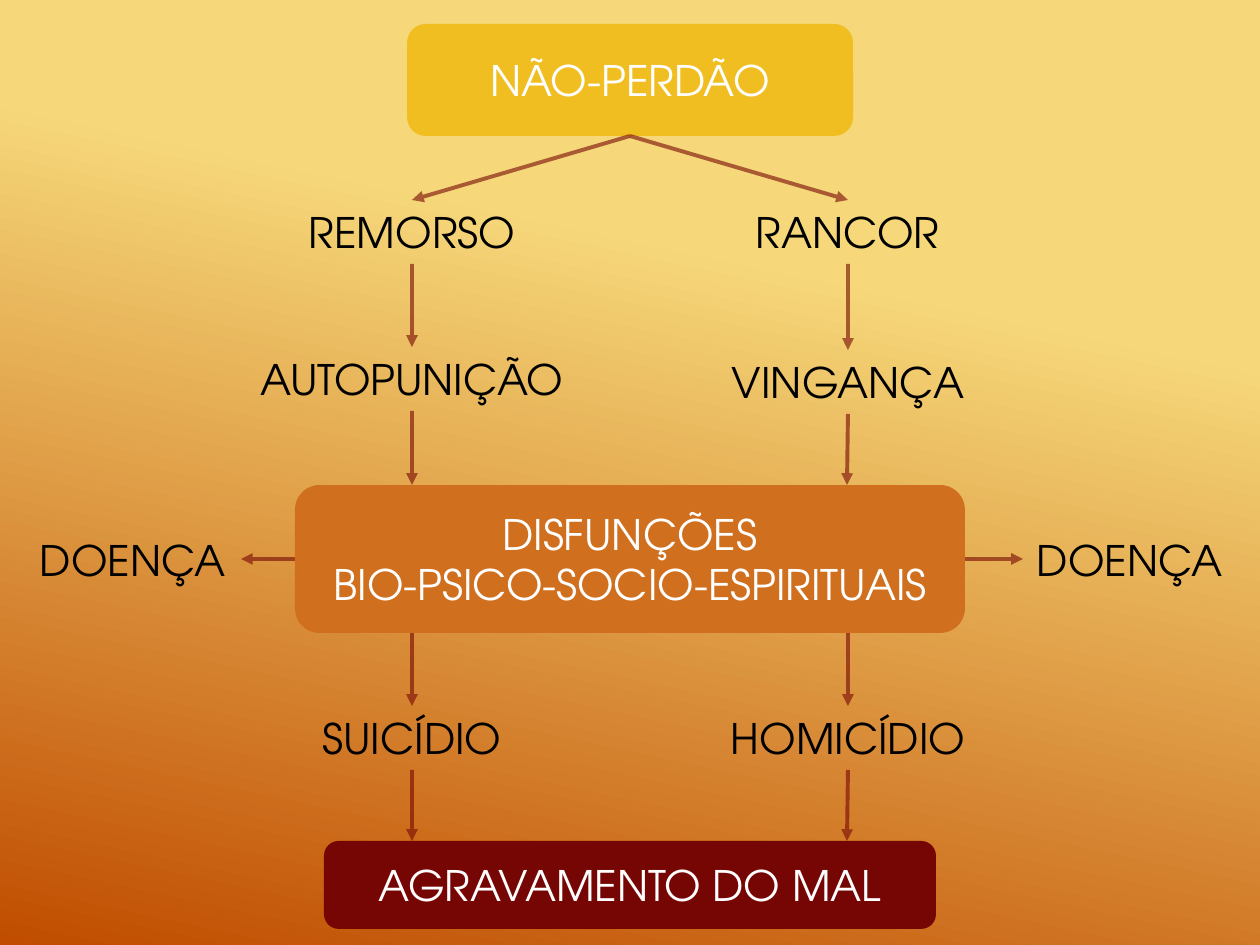
import lxml.etree
import pptx
import pptx.dml.color
import pptx.enum.shapes
import pptx.enum.text
import pptx.oxml.ns
import pptx.util

RGBColor = pptx.dml.color.RGBColor
PALE_YELLOW = RGBColor(0xF6, 0xD8, 0x7A)
BURNT_ORANGE = RGBColor(0xC0, 0x4D, 0x00)
GOLD = RGBColor(0xF0, 0xBE, 0x21)
ORANGE = RGBColor(0xD0, 0x6F, 0x1E)
MAROON = RGBColor(0x76, 0x06, 0x03)
WHITE = RGBColor(0xFF, 0xFF, 0xFF)
BLACK = RGBColor(0x00, 0x00, 0x00)

PX_PER_INCH = 126
LABEL_HEIGHT = 64


def px(length):
    return pptx.util.Emu(round(length * 914400 / PX_PER_INCH))


class FlowSlide:
    font_name = "TeX Gyre Adventor"
    font_size = pptx.util.Pt(24)
    arrow_width = pptx.util.Pt(2.25)
    arrow_opacity = "60000"

    def __init__(self, slide):
        self.slide = slide

    def background(self, start, end):
        fill = self.slide.background.fill
        fill.gradient()
        fill.gradient_angle = 258
        for stop, color, position in zip(fill.gradient_stops, (start, end), (0.3, 1)):
            stop.color.rgb = color
            stop.position = position

    def set_lines(self, frame, lines, color):
        frame.word_wrap = False
        for index, line in enumerate(lines):
            paragraph = frame.add_paragraph() if index else frame.paragraphs[0]
            paragraph.text = line
            paragraph.alignment = pptx.enum.text.PP_ALIGN.CENTER
            paragraph.font.name = self.font_name
            paragraph.font.size = self.font_size
            paragraph.font.color.rgb = color

    def box(self, lines, left, top, width, height, color):
        box = self.slide.shapes.add_shape(
            pptx.enum.shapes.MSO_SHAPE.ROUNDED_RECTANGLE,
            px(left), px(top), px(width), px(height))
        box.shadow.inherit = False
        box.fill.solid()
        box.fill.fore_color.rgb = color
        box.line.fill.background()
        box.text_frame.vertical_anchor = pptx.enum.text.MSO_ANCHOR.MIDDLE
        self.set_lines(box.text_frame, lines, WHITE)

    def label(self, text, left, top, width):
        label = self.slide.shapes.add_textbox(
            px(left), px(top), px(width), px(LABEL_HEIGHT))
        self.set_lines(label.text_frame, [text], BLACK)
        label.text_frame.auto_size = pptx.enum.text.MSO_AUTO_SIZE.SHAPE_TO_FIT_TEXT

    def arrow(self, x1, y1, x2, y2):
        arrow = self.slide.shapes.add_connector(
            pptx.enum.shapes.MSO_CONNECTOR.STRAIGHT, px(x1), px(y1), px(x2), px(y2))
        arrow.line.width = self.arrow_width
        arrow.line.color.rgb = MAROON
        # Opacity, arrowhead and no shadow
        qn = pptx.oxml.ns.qn
        properties = arrow._element.spPr
        line = properties.find(qn("a:ln"))
        color = line.find(qn("a:solidFill")).find(qn("a:srgbClr"))
        lxml.etree.SubElement(color, qn("a:alpha"), val=self.arrow_opacity)
        lxml.etree.SubElement(line, qn("a:tailEnd"), type="triangle")
        lxml.etree.SubElement(properties, qn("a:effectLst"))


def main():
    presentation = pptx.Presentation()
    presentation.slide_width = px(1260)
    presentation.slide_height = px(945)
    blank_layout = presentation.slide_layouts[6]
    flow = FlowSlide(presentation.slides.add_slide(blank_layout))
    flow.background(PALE_YELLOW, BURNT_ORANGE)

    # Heights of the levels
    cause_bottom, feeling_top = 136, 200
    dysfunction_top, dysfunction_bottom = 485, 633
    outcome_top, worsening_top = 706, 841

    # Cause at the top
    flow.box(["NÃO-PERDÃO"], 407, 24, 446, cause_bottom - 24, GOLD)

    # Two branches: centre, arrow end, top of the reaction, then
    # feeling, reaction and outcome as (text, left, width)
    branches = [
        (412, 412, 347, ("REMORSO", 295, 234), ("AUTOPUNIÇÃO", 238, 348),
         ("SUICÍDIO", 305, 214)),
        (848, 847, 350, ("RANCOR", 743, 209), ("VINGANÇA", 717, 262),
         ("HOMICÍDIO", 717, 262)),
    ]
    for center, end, reaction_top, *labels in branches:
        tops = (feeling_top, reaction_top, outcome_top)
        for (text, left, width), top in zip(labels, tops):
            flow.label(text, left, top, width)
        flow.arrow(630, cause_bottom, center, feeling_top)
        flow.arrow(center, feeling_top + LABEL_HEIGHT, center, reaction_top)
        flow.arrow(center, reaction_top + LABEL_HEIGHT, end, dysfunction_top)
        flow.arrow(center, dysfunction_bottom, center, outcome_top)
        flow.arrow(center, outcome_top + LABEL_HEIGHT, end, worsening_top)

    # Illness on both sides
    for label_left, arrow_start, arrow_end in ((26, 295, 241), (1023, 965, 1023)):
        flow.label("DOENÇA", label_left, 528, 214)
        flow.arrow(arrow_start, 559, arrow_end, 559)

    # Dysfunctions and final worsening
    flow.box(["DISFUNÇÕES", "BIO-PSICO-SOCIO-ESPIRITUAIS"], 295, dysfunction_top,
             670, dysfunction_bottom - dysfunction_top, ORANGE)
    flow.box(["AGRAVAMENTO DO MAL"], 324, worsening_top, 612, 88, MAROON)

    presentation.save("out.pptx")


if __name__ == "__main__":
    main()
